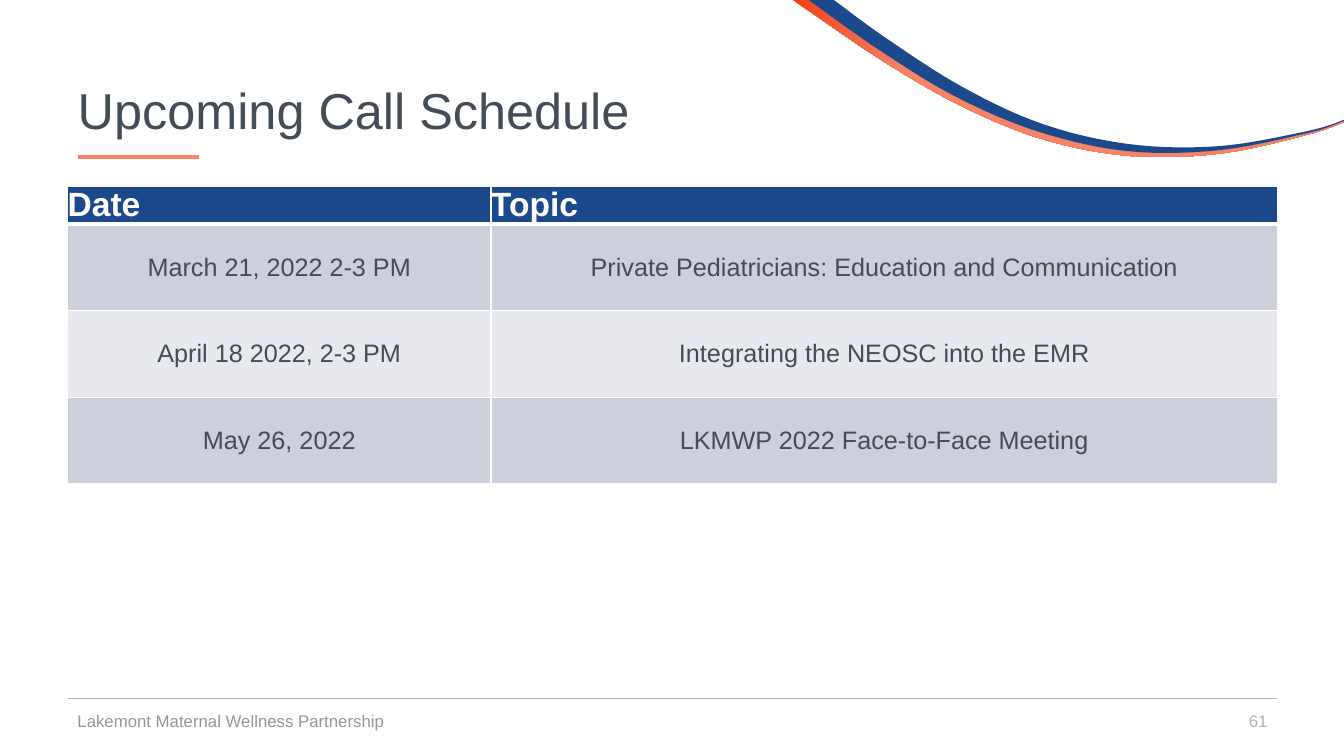
from pptx import Presentation, util as u
from pptx.dml.color import RGBColor
from pptx.enum import shapes, text
from pptx.oxml.ns import qn
from lxml import etree

W, H = 13.33, 7.5
MARGIN, COL, COLS = 0.67, 1, 12
INSET = 0.1
FONT = "Arial"
NAVY, CORAL, SLATE, SILVER, WHITE = "1C498B", "F58366", "444C55", "AFB3B9", "FFFFFF"
BANDS = ["CDD0DA", "E8E9EE"]

CALLS = [
    ("Date", "Topic"),
    ("March 21, 2022 2-3 PM", "Private Pediatricians: Education and Communication"),
    ("April 18 2022, 2-3 PM", "Integrating the NEOSC into the EMR"),
    ("May 26, 2022", "LKMWP 2022 Face-to-Face Meeting"),
]
CORAL_TOP = [(8.05, 0), (8.82, 0.54), (9.58, 0.99), (10.39, 1.33),
             (11.25, 1.5), (12.12, 1.49), (12.99, 1.32), (W, 1.2)]
CORAL_BOTTOM = [(W, 1.21), (12.99, 1.33), (12.13, 1.52), (11.24, 1.55),
                (10.37, 1.39), (9.55, 1.06), (8.78, 0.62), (8.04, 0.12), (7.86, 0)]
NAVY_TOP = [(8.27, 0), (8.79, 0.38), (9.54, 0.86), (10.34, 1.23),
            (11.2, 1.43), (12.09, 1.45), (12.97, 1.3), (W, 1.19)]
NAVY_BOTTOM = [(W, 1.2), (12.97, 1.32), (12.09, 1.49), (11.19, 1.5),
               (10.31, 1.31), (9.48, 0.96), (8.71, 0.49), (8.02, 0)]


def color(value):
    return RGBColor.from_string(value)


def inches(*lengths):
    return [u.Inches(n) for n in lengths]


def write(tf, words, size, ink, align=text.PP_ALIGN.LEFT, bold=False):
    p = tf.paragraphs[0]
    p.text = words
    p.alignment = align
    p.font.name, p.font.size, p.font.bold = FONT, u.Pt(size), bold
    p.font.color.rgb = color(ink)
    return p


def smooth_edge(points, steps=8):
    padded = [points[0], *points, points[-1]]
    curve = []
    for a, b, c, d in zip(padded, padded[1:], padded[2:], padded[3:]):
        for t in (i / steps for i in range(steps)):
            curve.append([
                q + t / 2 * (r - p + t * (2 * p - 5 * q + 4 * r - s
                                          + t * (3 * q - p - 3 * r + s)))
                for p, q, r, s in zip(a, b, c, d)])
    return curve + [points[-1]]


def add_ribbon(s, top, bottom):
    start, *rest = [inches(*pt) for pt in smooth_edge(top) + smooth_edge(bottom)]
    builder = s.shapes.build_freeform(*start)
    builder.add_line_segments(rest, close=True)
    sp = builder.convert_to_shape()
    sp.shadow.inherit = False
    sp.line.fill.background()
    return sp


def add_swoosh(s):
    fill = add_ribbon(s, CORAL_TOP, CORAL_BOTTOM).fill
    fill.gradient()
    fill.gradient_angle = 0
    for stop, position, tint in zip(fill.gradient_stops, (0, 0.2), ("F04115", CORAL)):
        stop.position = position
        stop.color.rgb = color(tint)
    fill = add_ribbon(s, NAVY_TOP, NAVY_BOTTOM).fill
    fill.solid()
    fill.fore_color.rgb = color(NAVY)


def add_rule(s, x, y, width, tint, weight):
    line = s.shapes.add_connector(shapes.MSO_CONNECTOR.STRAIGHT,
                                  *inches(x, y, x + width, y))
    line.line.color.rgb = color(tint)
    line.line.width = u.Pt(weight)
    etree.SubElement(line._element.spPr, qn("a:effectLst"))


def add_heading(s, x, y, width, height):
    title = s.shapes.title
    title.left, title.top, title.width, title.height = inches(x, y, width, height)
    title.text_frame.vertical_anchor = text.MSO_ANCHOR.MIDDLE
    write(title.text_frame, "Upcoming Call Schedule", 36, SLATE).line_spacing = 0.9
    add_rule(s, x + INSET, y + 0.8 * height, 1.2 * COL, CORAL, 2.5)


def set_borders(cell, bottom):
    tc_pr = cell._tc.get_or_add_tcPr()
    for index, (side, weight) in enumerate(zip("LRTB", (1, 1, 1, bottom))):
        ln = etree.Element(qn(f"a:ln{side}"), w=str(u.Pt(weight)))
        fill = etree.SubElement(ln, qn("a:solidFill"))
        etree.SubElement(fill, qn("a:srgbClr"), val=WHITE)
        tc_pr.insert(index, ln)


def add_schedule(s, x, y, width, header, row):
    heights = [header] + [row] * (len(CALLS) - 1)
    table = s.shapes.add_table(len(CALLS), 2, *inches(x, y, width, sum(heights))).table
    for column, share in zip(table.columns, (0.35, 0.65)):
        column.width = u.Inches(width * share)
    for i, (call, height) in enumerate(zip(CALLS, heights)):
        table.rows[i].height = u.Inches(height)
        for cell, words in zip(table.rows[i].cells, call):
            cell.margin_left = cell.margin_right = 0
            cell.margin_top = cell.margin_bottom = 0
            cell.vertical_anchor = text.MSO_ANCHOR.MIDDLE
            cell.fill.solid()
            cell.fill.fore_color.rgb = color(BANDS[(i - 1) % 2] if i else NAVY)
            set_borders(cell, 1 if i else 3)
            if i:
                write(cell.text_frame, words, 18, SLATE, text.PP_ALIGN.CENTER)
            else:
                write(cell.text_frame, words, 24, WHITE, bold=True)


def add_footer(s, x, y, width, height):
    add_rule(s, x, y - 0.02, width, SILVER, 0.5)
    number_width = 3 * COL
    for left, span, words, ink, align in (
            (x, 4.5 * COL, "Lakemont Maternal Wellness Partnership", "949699",
             text.PP_ALIGN.LEFT),
            (x + width - number_width, number_width, "61", SILVER, text.PP_ALIGN.RIGHT)):
        tf = s.shapes.add_textbox(*inches(left, y, span, height)).text_frame
        tf.word_wrap = True
        tf.vertical_anchor = text.MSO_ANCHOR.MIDDLE
        write(tf, words, 12, ink, align)


def main():
    prs = Presentation()
    prs.slide_width, prs.slide_height = inches(W, H)
    s = prs.slides.add_slide(prs.slide_layouts[5])
    width = COLS * COL
    add_swoosh(s)
    add_heading(s, MARGIN, 0.4, width, 1.45)
    add_schedule(s, MARGIN, 1.85, width, 0.35, 0.86)
    add_footer(s, MARGIN, 6.95, width, 0.4)
    prs.save("out.pptx")


if __name__ == "__main__":
    main()
